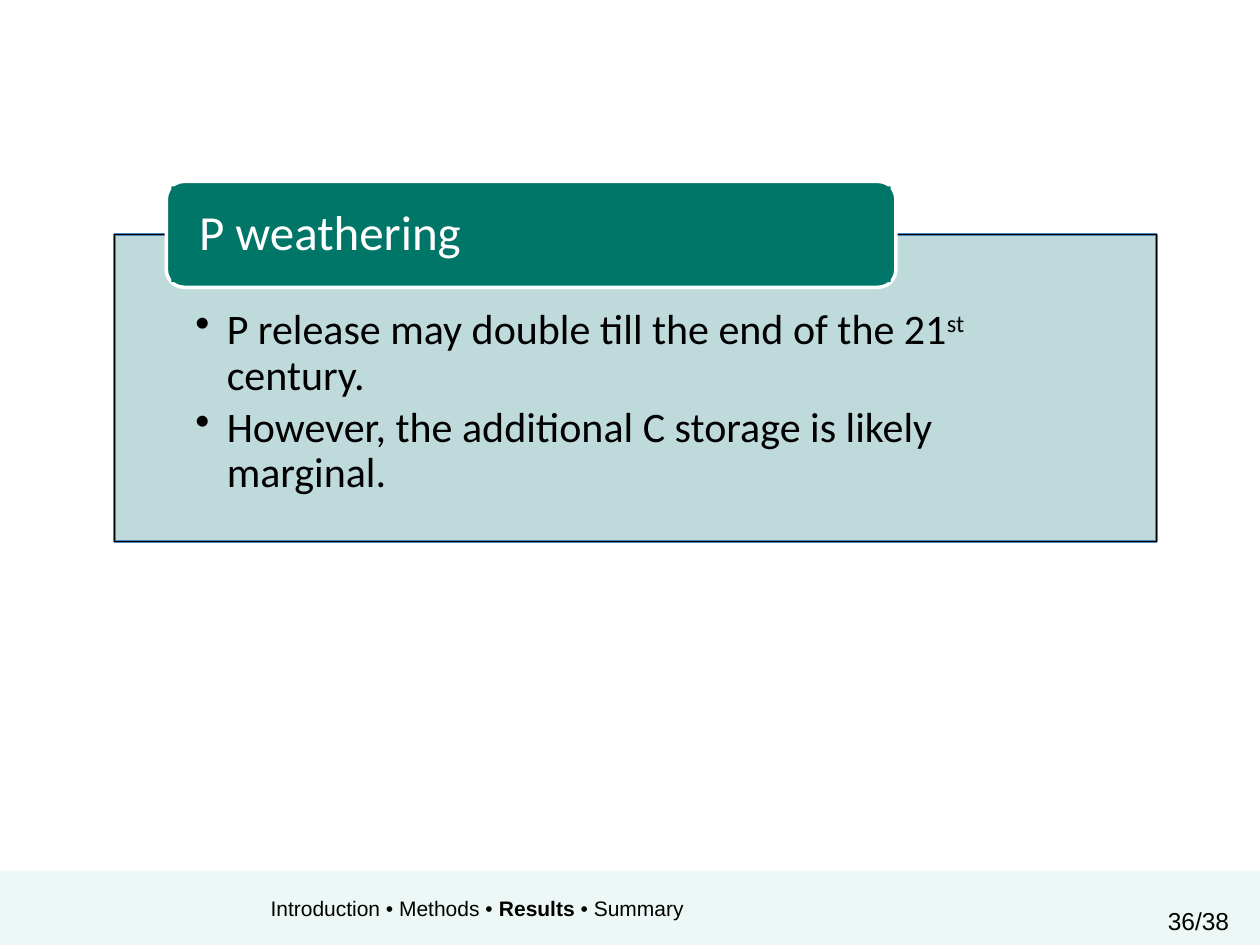
from lxml import etree
from pptx import Presentation
from pptx.dml.color import RGBColor
from pptx.enum.shapes import MSO_SHAPE
from pptx.enum.text import MSO_ANCHOR, PP_ALIGN
from pptx.oxml.ns import qn
from pptx.util import Inches, Pt

RECTANGLE, ROUNDED = MSO_SHAPE.RECTANGLE, MSO_SHAPE.ROUNDED_RECTANGLE
TOP, MIDDLE = MSO_ANCHOR.TOP, MSO_ANCHOR.MIDDLE

# A run is its text and the format that differs from the rest of its text.
HEADING = [[("P weathering", {})]]
FINDINGS = [
    [("P release may double till the end of the 21", {}),
     ("st", {"baseline": 30}),
     (" century.", {})],
    [("However, the additional C storage is likely marginal.", {})],
]
NAVIGATION = [[("Introduction • Methods • ", {}),
               ("Results", {"bold": True}),
               (" • Summary", {})]]
PAGE_NUMBER = [[("36/38", {})]]

FOOTER_BAND = (0, 6.91, 10, 0.59)
PANEL = (0.91, 1.86, 8.27, 2.44)
TAB = (1.32, 1.44, 5.79, 0.84)
TAB_INSET = 0.04
TAB_LABEL = (TAB[0] + TAB_INSET, TAB[1] + TAB_INSET,
             TAB[2] - 2 * TAB_INSET, TAB[3] - 2 * TAB_INSET)
BULLET_INDENT = 0.25
GREEN = "007668"


def rgb(value):
    return RGBColor.from_string(value)


def add_box(slide, kind, place, fill=None, line=None):
    """Add a shape; line is a (colour, width in points) pair."""
    shape = slide.shapes.add_shape(kind, *map(Inches, place))
    shape.shadow.inherit = False
    if fill:
        shape.fill.solid()
        shape.fill.fore_color.rgb = rgb(fill)
    else:
        shape.fill.background()
    if line:
        shape.line.color.rgb = rgb(line[0])
        shape.line.width = Pt(line[1])
    else:
        shape.line.fill.background()
    return shape


def add_bullet(paragraph):
    properties = paragraph._p.get_or_add_pPr()
    properties.set("marL", str(Inches(BULLET_INDENT)))
    properties.set("indent", str(-Inches(BULLET_INDENT)))
    etree.SubElement(properties, qn("a:buChar")).set("char", "•")


def write(shape, paragraphs, font, frame_format, paragraph_format=None, bullets=False):
    """Fill a shape with paragraphs of runs."""
    frame = shape.text_frame
    for name, value in frame_format.items():
        setattr(frame, name, value)
    for index, runs in enumerate(paragraphs):
        paragraph = frame.paragraphs[0] if index == 0 else frame.add_paragraph()
        if bullets:
            add_bullet(paragraph)
        for name, value in {"alignment": PP_ALIGN.LEFT, **(paragraph_format or {})}.items():
            setattr(paragraph, name, value)
        for text, changes in runs:
            run = paragraph.add_run()
            run.text = text
            run_format = {**font, **changes}
            run.font.color.rgb = rgb(run_format.pop("color"))
            baseline = run_format.pop("baseline", None)
            for name, value in run_format.items():
                setattr(run.font, name, value)
            if baseline:
                run.font._element.set("baseline", str(baseline * 1000))


def margins(left, top, right, bottom):
    return {"margin_left": Inches(left), "margin_top": Inches(top),
            "margin_right": Inches(right), "margin_bottom": Inches(bottom)}


def main():
    presentation = Presentation()
    presentation.slide_width, presentation.slide_height = Inches(10), Inches(7.5)
    slide = presentation.slides.add_slide(presentation.slide_layouts[6])

    add_box(slide, RECTANGLE, FOOTER_BAND, "EDF8F6")
    add_box(slide, RECTANGLE, PANEL, "BFDADA", ("4F81BD", 2))
    findings = add_box(slide, RECTANGLE, PANEL, line=("000000", 0.75))
    write(findings, FINDINGS,
          {"name": "Calibri", "size": Pt(24), "color": "000000"},
          {"word_wrap": True, "vertical_anchor": TOP, **margins(0.64, 0.59, 0.64, 0.19)},
          {"line_spacing": 0.9, "space_after": Pt(4)}, bullets=True)

    add_box(slide, ROUNDED, TAB, GREEN, ("FFFFFF", 2))
    heading = add_box(slide, RECTANGLE, TAB_LABEL, GREEN)
    write(heading, HEADING,
          {"name": "Calibri", "size": Pt(28), "color": "FFFFFF"},
          {"word_wrap": True, "vertical_anchor": MIDDLE, **margins(0.22, 0, 0.22, 0)},
          {"line_spacing": 0.9})

    for paragraphs, place, size in ((NAVIGATION, (2.05, 7.06, 3.5, 0.53), 12),
                                    (PAGE_NUMBER, (9.17, 7.14, 1, 1), 14)):
        box = slide.shapes.add_textbox(*map(Inches, place))
        write(box, paragraphs,
              {"name": "Arial", "size": Pt(size), "color": "000000"},
              {"word_wrap": False, "vertical_anchor": TOP})

    presentation.save("out.pptx")


if __name__ == "__main__":
    main()
